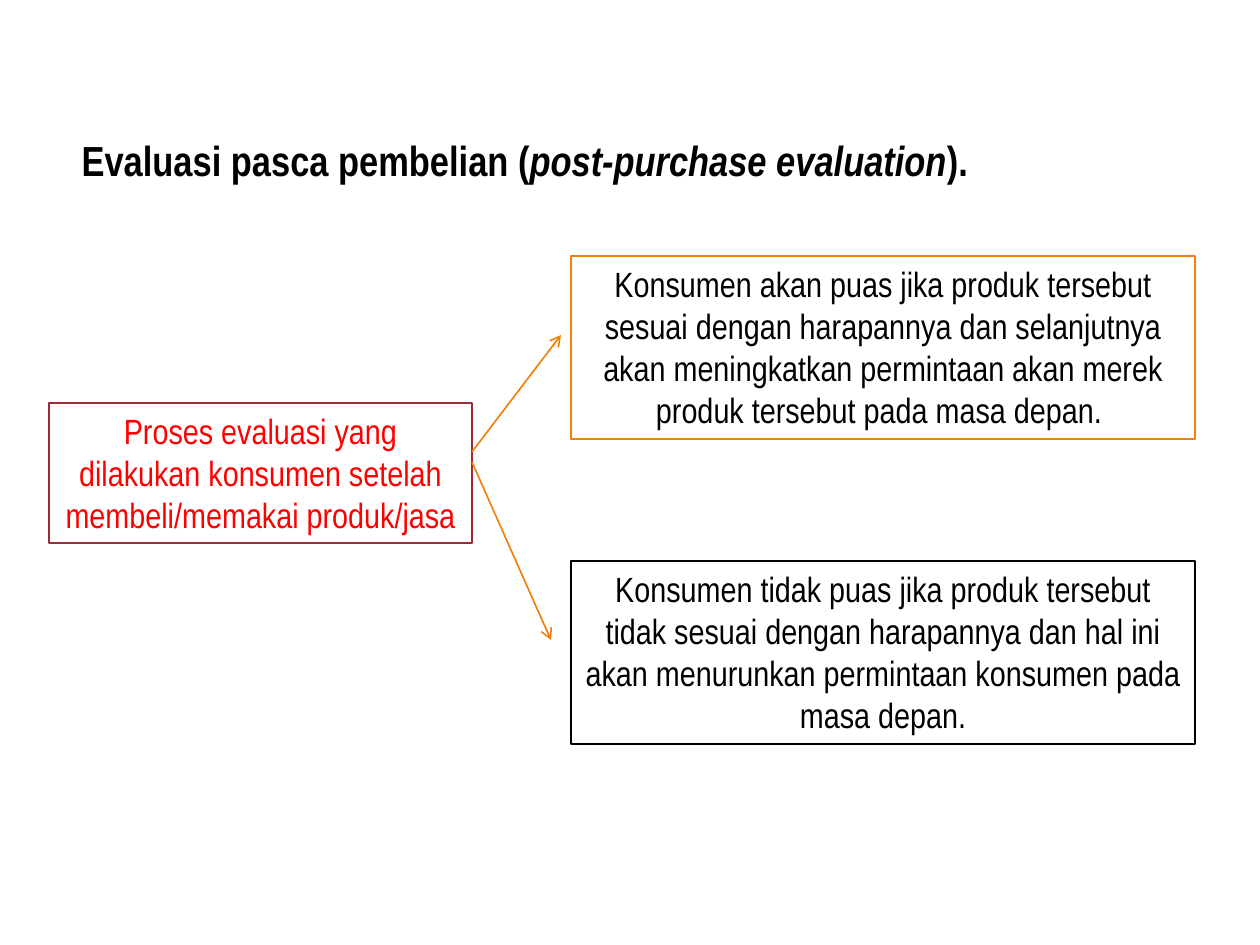
from lxml.etree import SubElement
from pptx import Presentation
from pptx.dml.color import RGBColor
from pptx.enum.shapes import MSO_CONNECTOR as Link, MSO_SHAPE as Shape
from pptx.enum.text import MSO_ANCHOR as Anchor, MSO_AUTO_SIZE as Fit, PP_ALIGN as Align
from pptx.oxml.ns import qn
from pptx.util import Emu, Pt

PX_PER_INCH = 126
BLACK, WHITE, RED = "000000", "FFFFFF", "FF0000"
MAROON, ORANGE = "9F2936", "F07F09"


def px(length):
    return Emu(round(length * 914400 / PX_PER_INCH))


def color(code):
    return RGBColor.from_string(code)


class Board:
    font = "Arial Narrow"
    heading_size, box_size = 24, 20
    border, arrow_width = 1.5, 0.94

    def __init__(self, slide):
        self.slide = slide

    def add_run(self, paragraph, text, size, ink, bold=False, italic=False):
        run = paragraph.add_run()
        run.text = text
        run.font.name, run.font.size = self.font, Pt(size)
        run.font.bold, run.font.italic = bold, italic
        run.font.color.rgb = color(ink)

    def heading(self, left, top, width, height, parts):
        body = self.slide.placeholders[1]
        body.left, body.top, body.width, body.height = map(px, (left, top, width, height))
        frame = body.text_frame
        frame.auto_size, frame.vertical_anchor = Fit.NONE, Anchor.TOP
        line = frame.paragraphs[0]
        line.line_spacing, line.space_before = 1.2, Pt(12)
        # Hanging indent without a bullet
        props = line._p.get_or_add_pPr()
        props.set("marL", str(px(48)))
        props.set("indent", str(-px(48)))
        SubElement(props, qn("a:buNone"))
        for text, italic in parts:
            self.add_run(line, text, self.heading_size, BLACK, True, italic)

    def box(self, left, top, width, height, text, edge, ink=BLACK):
        box = self.slide.shapes.add_shape(
            Shape.RECTANGLE, *map(px, (left, top, width, height)))
        box.shadow.inherit = False
        box.fill.solid()
        box.fill.fore_color.rgb = color(WHITE)
        box.line.color.rgb, box.line.width = color(edge), Pt(self.border)
        frame = box.text_frame
        frame.word_wrap, frame.auto_size = True, Fit.SHAPE_TO_FIT_TEXT
        frame.vertical_anchor = Anchor.TOP
        frame.paragraphs[0].alignment = Align.CENTER
        self.add_run(frame.paragraphs[0], text, self.box_size, ink)

    def arrow(self, start, end):
        arrow = self.slide.shapes.add_connector(
            Link.STRAIGHT, *map(px, (*start, *end)))
        arrow.line.color.rgb, arrow.line.width = color(ORANGE), Pt(self.arrow_width)
        SubElement(arrow.line._get_or_add_ln(), qn("a:tailEnd"), type="arrow")
        SubElement(arrow._element.spPr, qn("a:effectLst"))


def main():
    deck = Presentation()
    deck.slide_width, deck.slide_height = px(1260), px(945)
    slide = deck.slides.add_slide(deck.slide_layouts[1])
    title = slide.shapes.title._element
    title.getparent().remove(title)
    board = Board(slide)

    # Topic
    board.heading(69, 118, 1134, 49, [
        ("Evaluasi pasca pembelian (", False),
        ("post-purchase evaluation", True),
        (").", False),
    ])

    # Evaluation process
    board.box(49, 403, 423, 140,
              "Proses evaluasi yang dilakukan konsumen setelah "
              "membeli/memakai produk/jasa", MAROON, RED)

    # Two outcomes: satisfied and dissatisfied
    outcomes = [
        (256, ORANGE, "Konsumen akan puas jika produk tersebut sesuai dengan "
         "harapannya dan selanjutnya akan meningkatkan permintaan akan merek "
         "produk tersebut pada masa depan. "),
        (561, BLACK, "Konsumen tidak puas jika produk tersebut tidak sesuai "
         "dengan harapannya dan hal ini akan menurunkan permintaan konsumen "
         "pada masa depan."),
    ]
    for top, edge, text in outcomes:
        board.box(571, top, 624, 183, text, edge)

    # Arrows from the process to each outcome
    board.arrow((472, 452), (561, 335))
    board.arrow((472, 462), (551, 640))

    deck.save("out.pptx")


if __name__ == "__main__":
    main()
